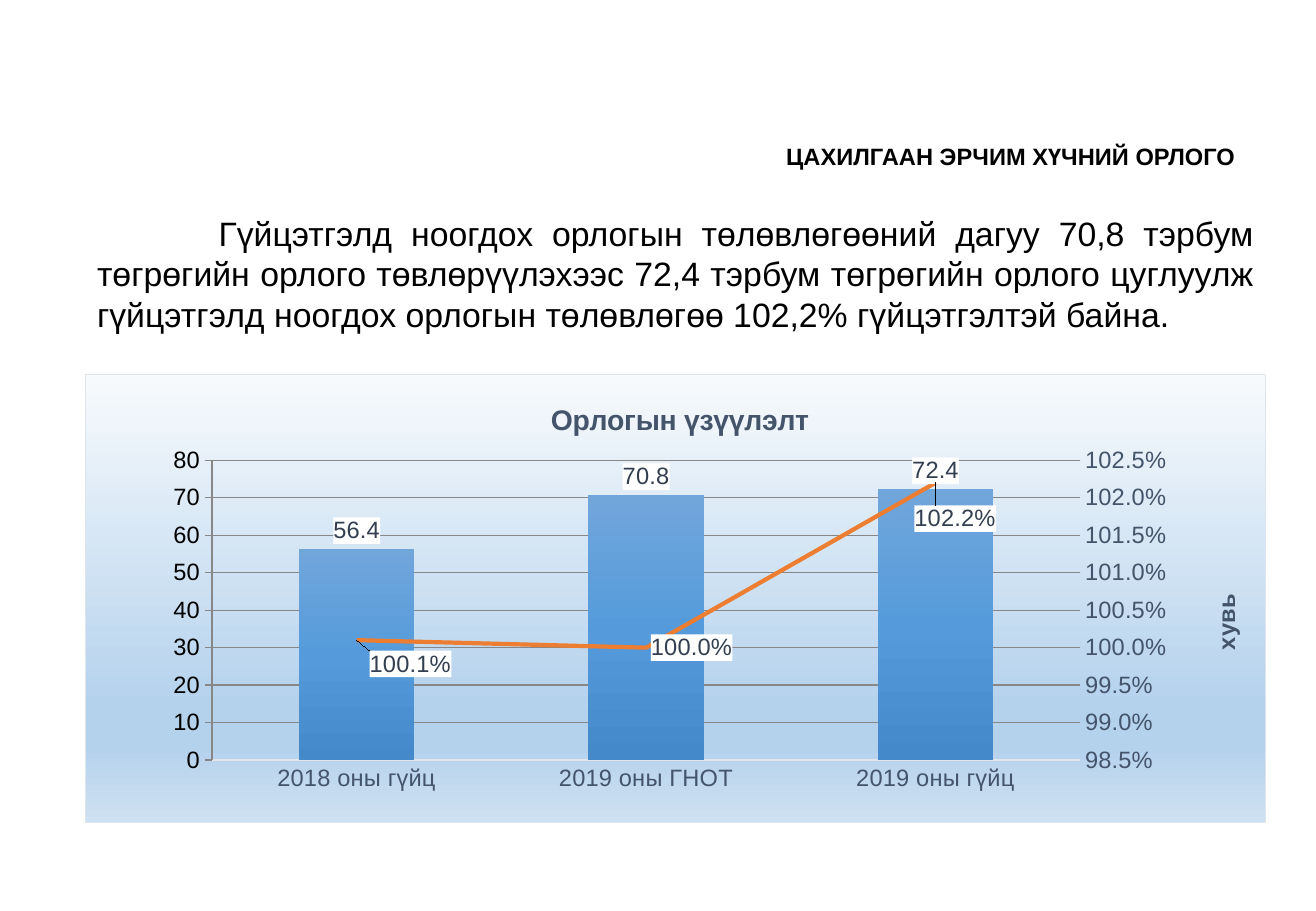
from copy import deepcopy

from lxml import etree
from pptx import Presentation
from pptx.chart.axis import ValueAxis
from pptx.chart.data import CategoryChartData
from pptx.dml.color import RGBColor
from pptx.enum.chart import XL_CHART_TYPE as ChartType, XL_LABEL_POSITION as LabelPos
from pptx.enum.chart import XL_TICK_MARK as TickMark
from pptx.enum.text import PP_ALIGN as Align
from pptx.oxml import parse_xml
from pptx.oxml.ns import nsdecls, qn
from pptx.util import Inches, Pt

SLIDE_W, SLIDE_H = 10.83, 7.5
MARGIN, CONTENT_W = 0.7, 9.72
FONT = "Arial"
BLACK, SLATE, LABEL, GRID, ORANGE = "000000", "44546A", "333F50", "E0E5EB", "ED7D31"
PANEL_STOPS = [(0, "F7FAFD"), (74, "B5D2EC"), (83, "B5D2EC"), (100, "CEE1F2")]
BAR_STOPS = [(0, "71A6DB"), (50, "559BDB"), (100, "448ACA")]


def color(value):
    return RGBColor.from_string(value)


def style_font(font, size, value, bold=False):
    font.name, font.size, font.bold = FONT, Pt(size), bold
    font.color.rgb = color(value)


def style_line(line, value, width):
    line.color.rgb = color(value)
    line.width = Pt(width)


def chart_xml(body):
    return parse_xml(body.replace(">", f" {nsdecls('c', 'a')}>", 1))


def gradient(stops):
    marks = "".join(f'<a:gs pos="{pos * 1000}"><a:srgbClr val="{value}"/></a:gs>'
                    for pos, value in stops)
    return chart_xml(f'<a:gradFill><a:gsLst>{marks}</a:gsLst>'
                     '<a:lin ang="5400000" scaled="0"/></a:gradFill>')


def layout(x, y, size=None):
    """Manual layout in shares of the chart; with a size it is the inner plot."""
    values = {"x": x, "y": y}
    tags = ""
    if size:
        values.update(w=size[0], h=size[1])
        tags = '<c:layoutTarget val="inner"/>'
    if size != ():
        tags += '<c:xMode val="edge"/><c:yMode val="edge"/>'
    tags += "".join(f'<c:{key} val="{value}"/>' for key, value in values.items())
    return chart_xml(f"<c:layout><c:manualLayout>{tags}</c:manualLayout></c:layout>")


def add_text(page, box, text, size, bold=False):
    shape = page.shapes.add_textbox(*map(Inches, box))
    shape.text_frame.word_wrap = True
    para = shape.text_frame.paragraphs[0]
    para.text = text
    para.alignment = Align.JUSTIFY
    style_font(para.runs[0].font, size, BLACK, bold)
    return shape.text_frame, para


def set_title(owner, text, size, x, y):
    """Title of the chart or of an axis, at a share of the chart."""
    frame = owner.text_frame
    frame.text = text
    style_font(frame.paragraphs[0].runs[0].font, size, SLATE, True)
    element = owner._element
    for old in element.findall(qn("c:layout")):
        element.remove(old)
    element.find(qn("c:tx")).addnext(layout(x, y))


def style_value_axis(axis, title, place, low, high, step, number_format):
    axis.minimum_scale, axis.maximum_scale, axis.major_unit = low, high, step
    axis.major_tick_mark = axis.minor_tick_mark = TickMark.NONE
    axis.tick_labels.number_format = number_format
    axis.tick_labels.number_format_is_linked = False
    style_font(axis.tick_labels.font, 14, SLATE)
    axis.format.line.fill.background()
    set_title(axis.axis_title, title, 14, *place)


def style_labels(series, number_format, position):
    labels = series.data_labels
    labels.show_value = True
    labels.number_format, labels.number_format_is_linked = number_format, False
    labels.position = position
    style_font(labels.font, 14, LABEL)
    element = labels._element
    element.find(qn("c:numFmt")).addnext(chart_xml(
        '<c:spPr><a:solidFill><a:srgbClr val="FFFFFF"/></a:solidFill></c:spPr>'))
    return element


def shift_label(labels, slot, index, x, y):
    label = chart_xml(f'<c:dLbl><c:idx val="{index}"/></c:dLbl>')
    label.append(layout(x, y, ()))
    for part in labels:
        if part.tag not in (qn("c:dLbl"), qn("c:showLeaderLines")):
            label.append(deepcopy(part))
    labels.insert(slot, label)


def move_to_line(chart):
    """Put the second series on a line with its own right-hand axis."""
    area = chart._chartSpace.find(".//" + qn("c:plotArea"))
    bars = area.find(qn("c:barChart"))
    series = bars.findall(qn("c:ser"))[1]
    for extra in series.findall(qn("c:invertIfNegative")):
        series.remove(extra)
    line = chart_xml('<c:lineChart><c:grouping val="standard"/><c:varyColors val="0"/>'
                     '<c:marker val="1"/><c:axId val="5001"/><c:axId val="5002"/>'
                     '</c:lineChart>')
    line.insert(2, series)
    bars.addnext(line)

    left = area.find(qn("c:valAx"))
    right, hidden = deepcopy(left), deepcopy(area.find(qn("c:catAx")))
    left.addnext(right)
    right.addnext(hidden)
    for axis, own, other in ((hidden, "5001", "5002"), (right, "5002", "5001")):
        axis.find(qn("c:axId")).set("val", own)
        axis.find(qn("c:crossAx")).set("val", other)
    hidden.find(qn("c:delete")).set("val", "1")
    right.find(qn("c:axPos")).set("val", "r")
    right.find(qn("c:crosses")).set("val", "max")
    return area, ValueAxis(right)


def add_income_chart(page, box):
    data = CategoryChartData()
    data.categories = ["2018 оны гүйц", "2019 оны ГНОТ", "2019 оны гүйц"]
    data.add_series("Series 1", [56.4, 70.8, 72.4])
    data.add_series("Series 2", [1.001, 1, 1.022])
    chart = page.shapes.add_chart(ChartType.COLUMN_CLUSTERED,
                                  *map(Inches, box), data).chart
    style_font(chart.font, 14, BLACK)
    chart.has_legend = False
    chart.has_title = True
    set_title(chart.chart_title, "Орлогын үзүүлэлт", 16.8, 0.39, 0.05)

    # Panel
    panel = chart_xml(f'<c:spPr><a:ln w="9525"><a:solidFill><a:srgbClr val="{GRID}"/>'
                      '</a:solidFill></a:ln></c:spPr>')
    panel.insert(0, gradient(PANEL_STOPS))
    chart._chartSpace.find(qn("c:chart")).addnext(panel)

    # Axes
    area, right = move_to_line(chart)
    for old in area.findall(qn("c:layout")):
        area.remove(old)
    area.insert(0, layout(0.107, 0.191, (0.736, 0.669)))
    left, bottom = chart.value_axis, chart.category_axis
    style_value_axis(left, "тэрбум төгрөг", (0.018, 0.358), 0, 80, 10, "0.0")
    style_value_axis(right, "хувь", (0.95, 0.48), 0.985, 1.025, 0.005, "0.0%")
    right.has_major_gridlines = False
    style_line(left.major_gridlines.format.line, GRID, 0.75)
    style_line(bottom.format.line, GRID, 0.75)
    bottom.major_tick_mark = TickMark.NONE
    style_font(bottom.tick_labels.font, 14, SLATE)

    # Columns and line
    columns, line = chart.plots
    columns.gap_width, columns.vary_by_categories = 150, False
    income, percent = columns.series[0], line.series[0]
    income._element.get_or_add_spPr().append(gradient(BAR_STOPS))
    style_labels(income, "#,##0.0", LabelPos.OUTSIDE_END)
    style_line(percent.format.line, ORANGE, 2.5)
    percent.smooth = False
    percent._element.find(qn("c:spPr")).addnext(
        chart_xml('<c:marker><c:symbol val="none"/></c:marker>'))
    labels = style_labels(percent, "0.0%", LabelPos.RIGHT)
    for slot, shift in enumerate([(0, 0.007, 0.053), (2, -0.022, 0.08)]):
        shift_label(labels, slot, *shift)


def build_income_slide(deck):
    page = deck.slides.add_slide(deck.slide_layouts[6])
    # Heading
    frame, para = add_text(page, (6.26, 1.1, 4.48, 0.33),
                           "ЦАХИЛГААН ЭРЧИМ ХҮЧНИЙ ОРЛОГО", 14, True)
    frame.margin_left = Inches(0.21)
    para.line_spacing, para.space_after = 1.07, Pt(8)
    # Summary with an indented first line
    _, para = add_text(
        page, (MARGIN, 1.7, CONTENT_W, 1.11),
        "Гүйцэтгэлд ноогдох орлогын төлөвлөгөөний дагуу 70,8 тэрбум төгрөгийн орлого "
        "төвлөрүүлэхээс 72,4 тэрбум төгрөгийн орлого цуглуулж гүйцэтгэлд ноогдох орлогын "
        "төлөвлөгөө 102,2% гүйцэтгэлтэй байна.", 20)
    para._p.get_or_add_pPr().set("indent", str(Inches(1)))
    # Chart
    add_income_chart(page, (MARGIN, 3.08, CONTENT_W, 3.7))


def main():
    deck = Presentation()
    deck.slide_width, deck.slide_height = Inches(SLIDE_W), Inches(SLIDE_H)
    build_income_slide(deck)
    deck.save("out.pptx")


if __name__ == "__main__":
    main()
